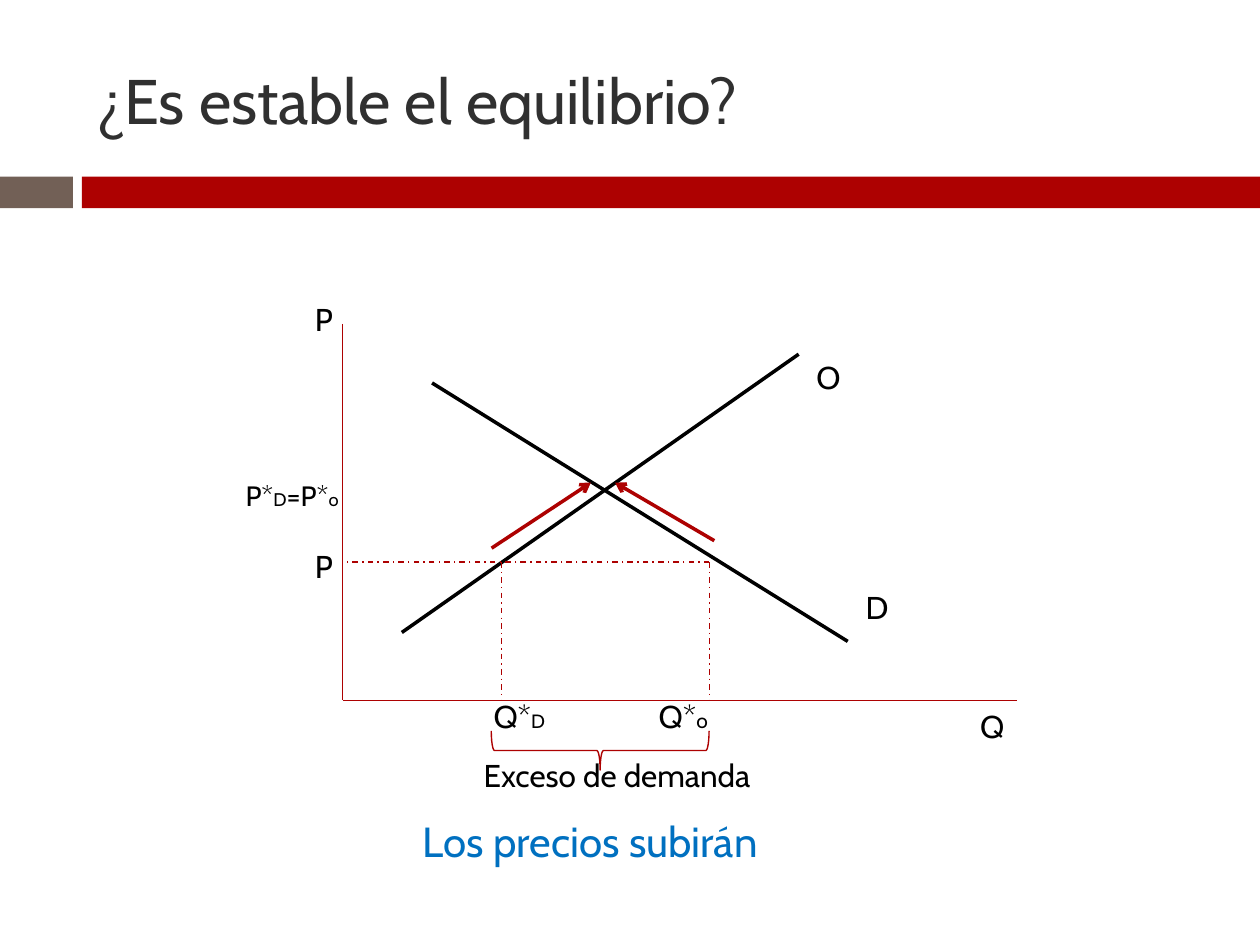
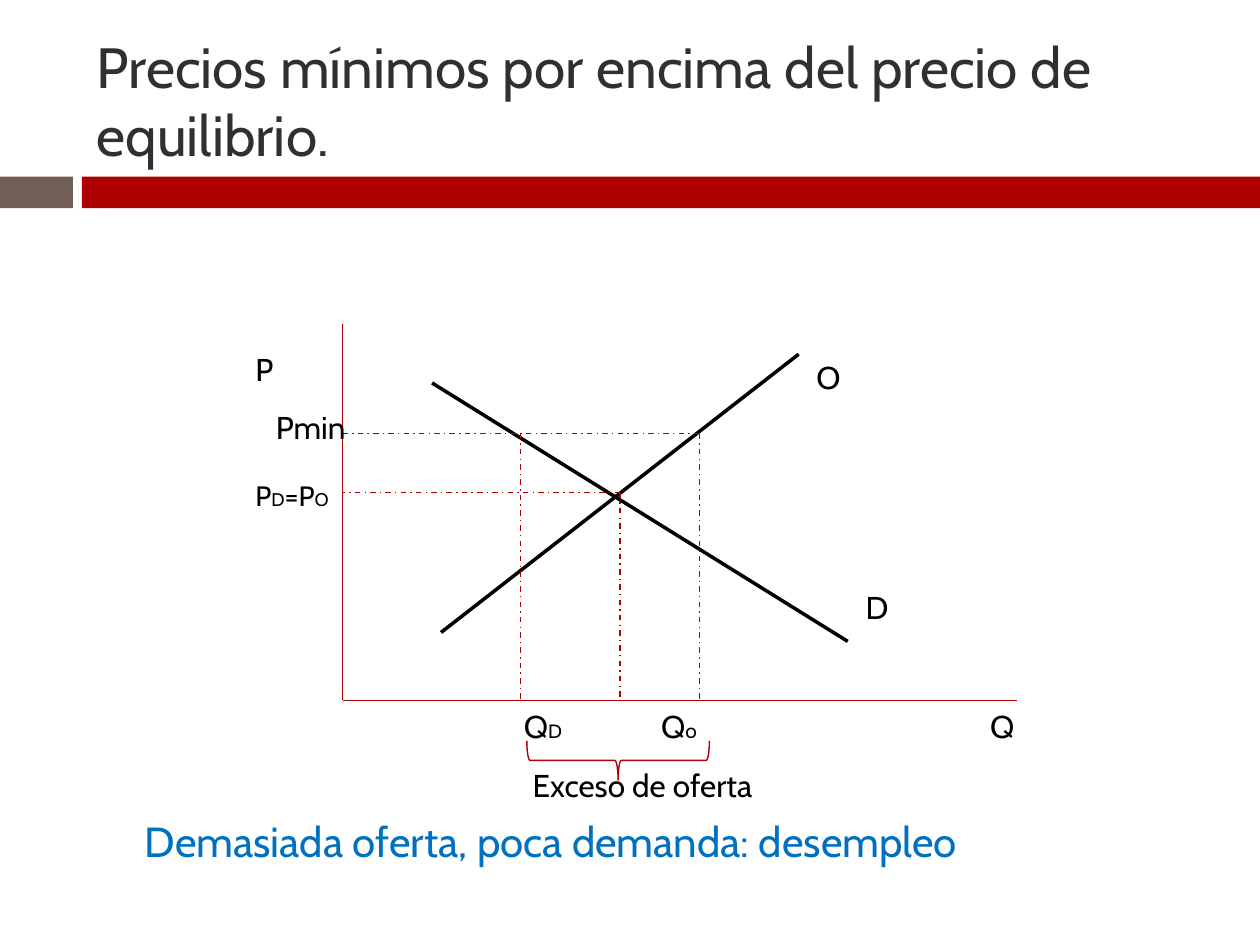
"""Build two slides on market equilibrium and minimum prices."""
from dataclasses import dataclass

from lxml import etree
from pptx import Presentation
from pptx import slide as sl
from pptx import util as u
from pptx.dml import color
from pptx.enum import dml, shapes, text
from pptx.oxml import ns

HUES = {"red": "AD0101", "brown": "726056", "title": "303030",
        "ink": "000000", "blue": "0070C0"}
FONT = "Cabin"
LEFT, TOP, RIGHT, BASE = 6.91, 6.53, 20.5, 14.12
FINE, BOLD = 0.79, 2
HIGH = {16: 0.94, 18: 1.02, 24: 1.27}
Runs = tuple[tuple[str, float], ...]


@dataclass
class Label:
    left: float
    top: float
    wide: float
    runs: Runs
    hue: str = "ink"
    mid: bool = False


@dataclass
class Line:
    start: tuple[float, float]
    end: tuple[float, float]
    hue: str = "red"
    width: float = FINE
    dash: bool = False
    head: bool = False


@dataclass
class Guide:
    price: float
    sums: tuple[float, ...]


@dataclass
class Brace:
    kind: shapes.MSO_SHAPE
    turn: int
    x: float
    y: float
    span: float


@dataclass
class Graph:
    title: str
    size: float
    offer: float
    guides: list[Guide]
    brace: Brace
    labels: list[Label]
    moves: list[Line]


def rgb(hue: str) -> color.RGBColor:
    """Return a named colour."""
    return color.RGBColor.from_string(HUES[hue])


def add_text(page: sl.Slide, item: Label, high: float = 0) -> None:
    """Add a label; a given height fixes the box and centres it vertically."""
    tall = high or HIGH[item.runs[0][1]]
    box = page.shapes.add_textbox(*map(u.Cm, (item.left, item.top, item.wide, tall)))
    frame = box.text_frame
    frame.word_wrap = True
    if high:
        frame.vertical_anchor = text.MSO_ANCHOR.MIDDLE
    else:
        frame.auto_size = text.MSO_AUTO_SIZE.SHAPE_TO_FIT_TEXT
    para = frame.paragraphs[0]
    para.alignment = text.PP_ALIGN.CENTER if item.mid else text.PP_ALIGN.LEFT
    for words, size in item.runs:
        run = para.add_run()
        run.text = words
        run.font.name = FONT
        run.font.size = u.Pt(size)
        run.font.color.rgb = rgb(item.hue)


def add_line(page: sl.Slide, item: Line) -> None:
    """Add a straight line, dashed or with an arrowhead if asked."""
    ends = map(u.Cm, item.start + item.end)
    link = page.shapes.add_connector(shapes.MSO_CONNECTOR.STRAIGHT, *ends)
    link.line.color.rgb = rgb(item.hue)
    link.line.width = u.Pt(item.width)
    if item.dash:
        link.line.dash_style = dml.MSO_LINE.DASH_DOT
    if item.head:
        tip = etree.SubElement(link.get_or_add_ln(), ns.qn("a:tailEnd"))
        tip.set("type", "arrow")
    etree.SubElement(link.element.spPr, ns.qn("a:effectLst"))


def add_band(page: sl.Slide, left: float, wide: float, hue: str) -> None:
    """Add one piece of the band under the title."""
    band = page.shapes.add_shape(shapes.MSO_SHAPE.RECTANGLE,
                                 *map(u.Cm, (left, 3.56, wide, 0.64)))
    band.shadow.inherit = False
    band.fill.solid()
    band.fill.fore_color.rgb = rgb(hue)
    band.line.fill.background()


def add_brace(page: sl.Slide, item: Brace) -> None:
    """Add a brace turned to point down, placed by its centre."""
    deep = 0.79
    spot = (item.x - deep / 2, item.y - item.span / 2, deep, item.span)
    brace = page.shapes.add_shape(item.kind, *map(u.Cm, spot))
    brace.rotation = item.turn
    brace.shadow.inherit = False
    brace.fill.background()
    brace.line.color.rgb = rgb("red")
    brace.line.width = u.Pt(FINE)


def add_graph(page: sl.Slide, graph: Graph) -> None:
    """Draw a whole slide."""
    add_band(page, 0, 1.47, "brown")
    add_band(page, 1.65, 23.75, "red")
    add_text(page, Label(1.7, 0.64, 22.66, ((graph.title, graph.size),), "title"), 2.74)
    lines = [Line((LEFT, TOP), (LEFT, BASE)),
             Line((LEFT, BASE), (RIGHT, BASE)),
             Line((8.71, 7.72), (17.09, 12.93), "ink", BOLD),
             Line((graph.offer, 12.75), (16.1, 7.14), "ink", BOLD)]
    for guide in graph.guides:
        price = guide.price
        lines.append(Line((max(guide.sums), price), (LEFT, price), dash=True))
        lines += [Line((x, price), (x, BASE), dash=True) for x in guide.sums]
    for item in lines + graph.moves:
        add_line(page, item)
    add_brace(page, graph.brace)
    for item in CURVES + graph.labels:
        add_text(page, item)


CURVES = [Label(17.2, 11.73, 0.89, (("D", 18),)),
          Label(16.21, 7.09, 1.02, (("O", 18),))]

GRAPHS = [
    Graph("¿Es estable el equilibrio?", 36, 8.1,
          [Guide(11.33, (10.11, 14.3))],
          Brace(shapes.MSO_SHAPE.LEFT_BRACE, 270, 12.1, 15.13, 4.39),
          [Label(6.1, 5.92, 2, (("P", 18),)),
           Label(19.51, BASE, 2.8, (("Q", 18),)),
           Label(3.1, 16.31, 17.6, (("Los precios subirán", 24),), "blue", True),
           Label(4.7, 9.53, 2.5, (("P*", 16), ("D", 10.5), ("=P*", 16), ("o", 10.5))),
           Label(9.7, 13.92, 2, (("Q*", 18), ("D", 11))),
           Label(13.03, 13.92, 2, (("Q*", 18), ("o", 12))),
           Label(9.5, 15.11, 6, (("Exceso de demanda", 18),)),
           Label(6.1, 10.9, 2, (("P", 18),))],
          [Line((14.4, 10.9), (12.4, 9.73), width=BOLD, head=True),
           Line((9.91, 11.05), (11.91, 9.73), width=BOLD, head=True)]),
    Graph("Precios mínimos por encima del precio de equilibrio.", 32.4, 8.89,
          [Guide(9.93, (12.5,)), Guide(8.74, (10.49, 14.1))],
          Brace(shapes.MSO_SHAPE.RIGHT_BRACE, 90, 12.46, 15.33, 3.68),
          [Label(4.9, 6.93, 2, (("P", 18),)),
           Label(19.71, BASE, 2.8, (("Q", 18),)),
           Label(2.31, 16.31, 17.6,
                 (("Demasiada oferta, poca demanda: desempleo", 24),), "blue", True),
           Label(4.9, 9.53, 2.2, (("P", 16), ("D", 10.5), ("=P", 16), ("O", 10.5))),
           Label(10.31, BASE, 2, (("Q", 18), ("D", 11))),
           Label(13.08, BASE, 2, (("Q", 18), ("o", 12))),
           Label(10.49, 15.32, 5, (("Exceso de oferta", 18),)),
           Label(5.31, 8.1, 2, (("Pmin", 18),))],
          []),
]


def main() -> None:
    """Build and save the deck."""
    deck = Presentation()
    deck.slide_width, deck.slide_height = u.Cm(25.4), u.Cm(19.05)
    for graph in GRAPHS:
        add_graph(deck.slides.add_slide(deck.slide_layouts[6]), graph)
    deck.save("out.pptx")


if __name__ == "__main__":
    main()
